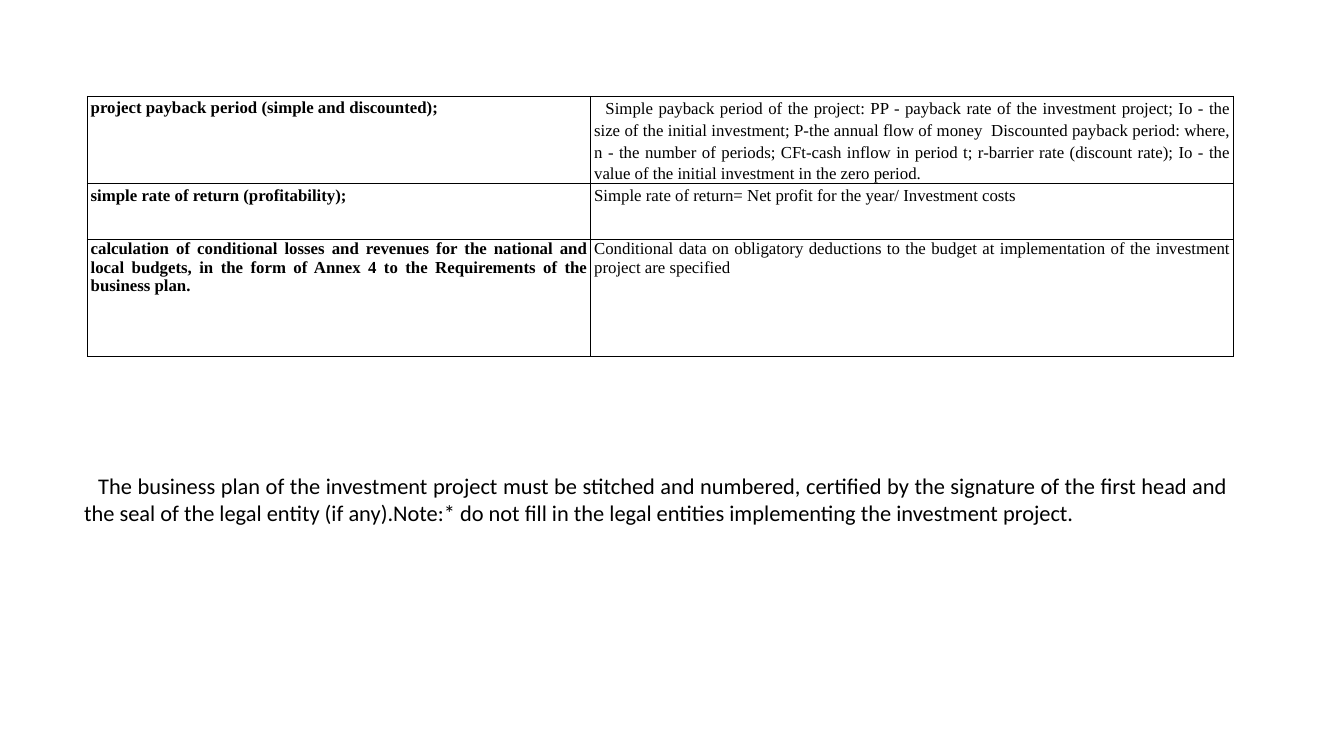
import pptx
import pptx.dml.color
import pptx.enum.text
import pptx.oxml
import pptx.oxml.ns
import pptx.util

BLACK = pptx.dml.color.RGBColor(0x00, 0x00, 0x00)
SLIDE_W, SLIDE_H = 26.67, 15
COLUMNS = [9.99, 12.76]
ROWS = [1.56, 1.12, 2.32]
SPACING = [1.15, 1.15, 1.0]

REQUIREMENTS = [
    (
        "project payback period (simple and discounted);",
        "Simple payback period of the project: PP - payback rate of the investment project; "
        "Io - the size of the initial investment; P-the annual flow of money "
        "  Discounted payback period: where, n - the number of periods; CFt-cash inflow in "
        "period t; r-barrier rate (discount rate); Io - the value of the initial investment "
        "in the zero period.",
    ),
    (
        "simple rate of return (profitability);",
        "Simple rate of return= Net profit for the year/ Investment costs",
    ),
    (
        "calculation of conditional losses and revenues for the national and local budgets, "
        "in the form of Annex 4 to the Requirements of the business plan.",
        "Conditional data on obligatory deductions to the budget at implementation of the "
        "investment project are specified",
    ),
]
REQUIREMENTS[0] = (REQUIREMENTS[0][0], REQUIREMENTS[0][1].replace("money   ", "money  "))

NOTE = (
    "The business plan of the investment project must be stitched and numbered, certified by "
    "the signature of the first head and the seal of the legal entity (if any).Note:* do not "
    "fill in the legal entities implementing the investment project."
)


class SlideBuilder:
    """Holds the text style and the current slide, and adds elements in inches."""

    def __init__(self, prs):
        self.color = BLACK
        self.table_font, self.table_size = "Times New Roman", 24
        self.note_font, self.note_size = "Calibri", 32
        self.s = prs.slides.add_slide(prs.slide_layouts[6])

    def style(self, p, name, size, bold=False, spacing=None):
        p.alignment = pptx.enum.text.PP_ALIGN.JUSTIFY
        p.line_spacing = spacing
        p.font.name, p.font.size, p.font.bold = name, pptx.util.Pt(size), bold
        p.font.color.rgb = self.color

    def border(self, cell):
        tc_pr = cell._tc.get_or_add_tcPr()
        for i, side in enumerate(("lnL", "lnR", "lnT", "lnB")):
            tc_pr.insert(i, pptx.oxml.parse_xml(
                f'<a:{side} {pptx.oxml.ns.nsdecls("a")} w="12700"><a:solidFill>'
                f'<a:srgbClr val="{self.color}"/></a:solidFill></a:{side}>'))

    def cell(self, cell, text, bold, spacing, lead):
        cell.margin_left = cell.margin_right = pptx.util.Inches(0.07)
        cell.margin_top = cell.margin_bottom = 0
        cell.fill.background()
        self.border(cell)
        p = cell.text_frame.paragraphs[0]
        self.style(p, self.table_font, self.table_size, bold, spacing)
        if lead:
            r = p.add_run()
            r.text, r.font.name = " ", "Courier New"
        p.add_run().text = text

    def table(self, left, top, rows):
        sp = self.s.shapes.add_table(
            len(ROWS), len(COLUMNS), pptx.util.Inches(left), pptx.util.Inches(top),
            pptx.util.Inches(sum(COLUMNS)), pptx.util.Inches(sum(ROWS)))
        table = sp.table
        table.first_row = table.horz_banding = False
        for column, width in zip(table.columns, COLUMNS):
            column.width = pptx.util.Inches(width)
        for i, texts in enumerate(rows):
            table.rows[i].height = pptx.util.Inches(ROWS[i])
            for j, text in enumerate(texts):
                self.cell(table.cell(i, j), text, j == 0, SPACING[i], (i, j) == (0, 1))

    def note(self, left, top, width, height, text, indent):
        sp = self.s.shapes.add_textbox(*map(pptx.util.Inches, (left, top, width, height)))
        tf = sp.text_frame
        tf.word_wrap = True
        tf.auto_size = pptx.enum.text.MSO_AUTO_SIZE.SHAPE_TO_FIT_TEXT
        p = tf.paragraphs[0]
        p.text = text
        self.style(p, self.note_font, self.note_size)
        p._p.get_or_add_pPr().set("indent", str(pptx.util.Inches(indent)))


def main():
    prs = pptx.Presentation()
    prs.slide_width = pptx.util.Inches(SLIDE_W)
    prs.slide_height = pptx.util.Inches(SLIDE_H)
    builder = SlideBuilder(prs)
    builder.table(1.73, 1.91, REQUIREMENTS)
    builder.note(1.57, 9.32, 22.91, 1.18, NOTE, 0.28)
    prs.save("out.pptx")


if __name__ == "__main__":
    main()
